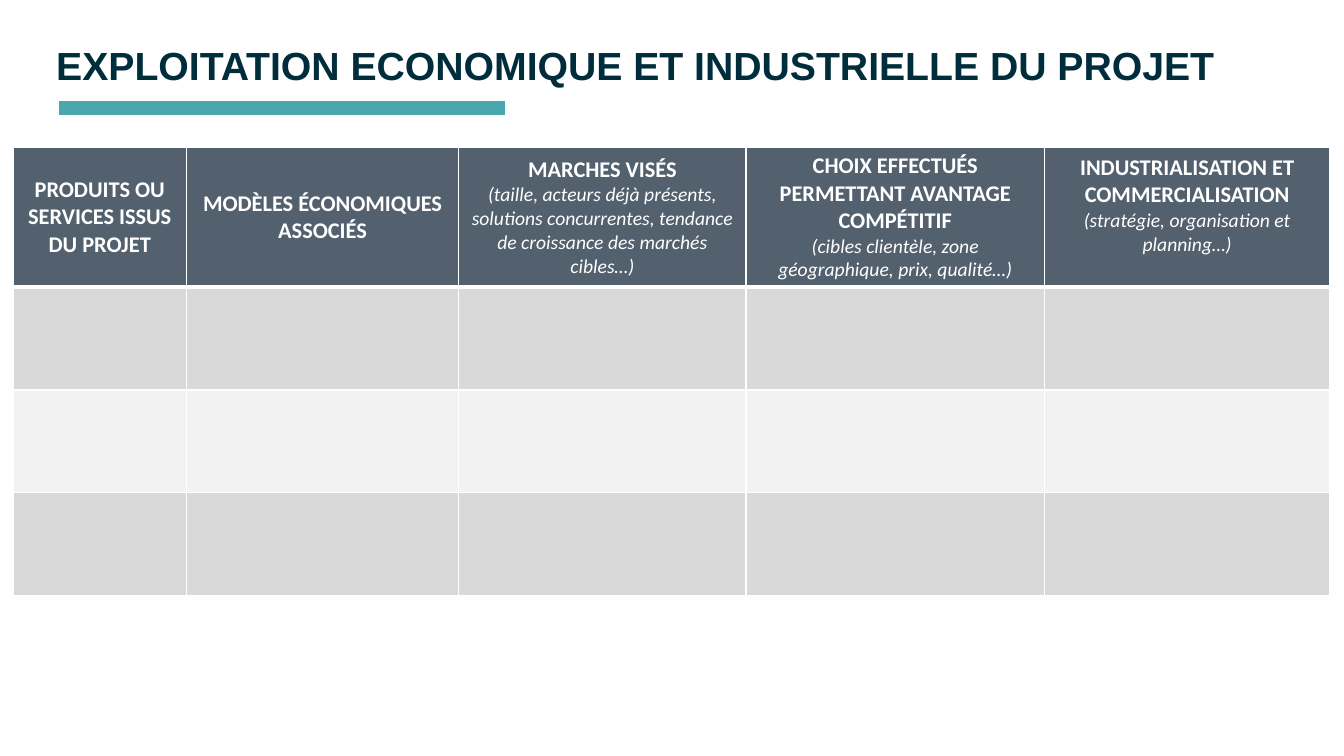
import pptx
import pptx.util
import pptx.dml.color
import pptx.enum.shapes
import pptx.enum.text
import lxml.etree
from pptx.util import Inches

HUES = {"navy": "002D3C", "teal": "49A8AE", "slate": "53606E",
        "white": "FFFFFF", "grey": "D9D9D9", "pale": "F2F2F2"}
HEADS = [
    ("PRODUITS OU SERVICES ISSUS DU PROJET", ""),
    ("MODÈLES ÉCONOMIQUES ASSOCIÉS", ""),
    ("MARCHES VISÉS",
     "(taille, acteurs déjà présents, solutions concurrentes, "
     "tendance de croissance des marchés cibles…)"),
    ("CHOIX EFFECTUÉS PERMETTANT AVANTAGE COMPÉTITIF",
     "(cibles clientèle, zone géographique, prix, qualité…)"),
    ("INDUSTRIALISATION ET COMMERCIALISATION",
     "(stratégie, organisation et planning…)"),
]
WIDTHS = [1.72, 2.7, 2.85, 2.96, 2.83]
HEIGHTS = [1.39, 1.02, 1.02, 1.02]
FILLS = ["slate", "grey", "pale", "grey"]
NS = "{http://schemas.openxmlformats.org/drawingml/2006/main}"


def hue(name):
    return pptx.dml.color.RGBColor.from_string(HUES[name])


def add_run(para, text, face, size, tint, bold=True):
    """Add a run that is bold, or else italic."""
    run = para.add_run()
    run.text = text
    run.font.name = face
    run.font.size = pptx.util.Pt(size)
    run.font.bold = bold
    run.font.italic = not bold
    run.font.color.rgb = hue(tint)


deck = pptx.Presentation()
deck.slide_width = Inches(13.33)
deck.slide_height = Inches(7.5)
slide = deck.slides.add_slide(deck.slide_layouts[6])

# Title and its rule
rule = slide.shapes.add_connector(
    pptx.enum.shapes.MSO_CONNECTOR.STRAIGHT,
    Inches(0.59), Inches(1.07), Inches(5.01), Inches(1.07))
rule.line.color.rgb = hue("teal")
rule.line.width = pptx.util.Pt(10)
lxml.etree.SubElement(rule._element.spPr, NS + "effectLst")

title = slide.shapes.add_textbox(
    Inches(0.46), Inches(0.4), Inches(12.87), Inches(0.54)).text_frame
title.word_wrap = True
title.vertical_anchor = pptx.enum.text.MSO_ANCHOR.MIDDLE
title.paragraphs[0].line_spacing = 0.9
add_run(title.paragraphs[0], "EXPLOITATION ECONOMIQUE ET INDUSTRIELLE DU PROJET",
        "Arial", 28, "navy")

# Table grid
table = slide.shapes.add_table(
    len(HEIGHTS), len(WIDTHS), Inches(0.13), Inches(1.46),
    Inches(sum(WIDTHS)), Inches(sum(HEIGHTS))).table
for col, width in zip(table.columns, WIDTHS):
    col.width = Inches(width)
for r, height in enumerate(HEIGHTS):
    table.rows[r].height = Inches(height)
    for cell in table.rows[r].cells:
        props = cell._tc.get_or_add_tcPr()
        for side in "LRTB":
            thick = (r, side) in [(0, "B"), (1, "T")]
            edge = lxml.etree.SubElement(
                props, NS + "ln" + side, w=str(pptx.util.Pt(3 if thick else 1)))
            fill = lxml.etree.SubElement(edge, NS + "solidFill")
            lxml.etree.SubElement(fill, NS + "srgbClr", val=HUES["white"])
        cell.fill.solid()
        cell.fill.fore_color.rgb = hue(FILLS[r])

# Header texts
for cell, (head, note) in zip(table.rows[0].cells, HEADS):
    cell.vertical_anchor = pptx.enum.text.MSO_ANCHOR.MIDDLE
    frame = cell.text_frame
    add_run(frame.paragraphs[0], head, "Calibri", 16, "white")
    if note:
        add_run(frame.add_paragraph(), note, "Calibri", 14, "white", bold=False)
    for para in frame.paragraphs:
        para.alignment = pptx.enum.text.PP_ALIGN.CENTER
table.cell(0, 4).margin_bottom = Inches(0.29)

deck.save("out.pptx")
